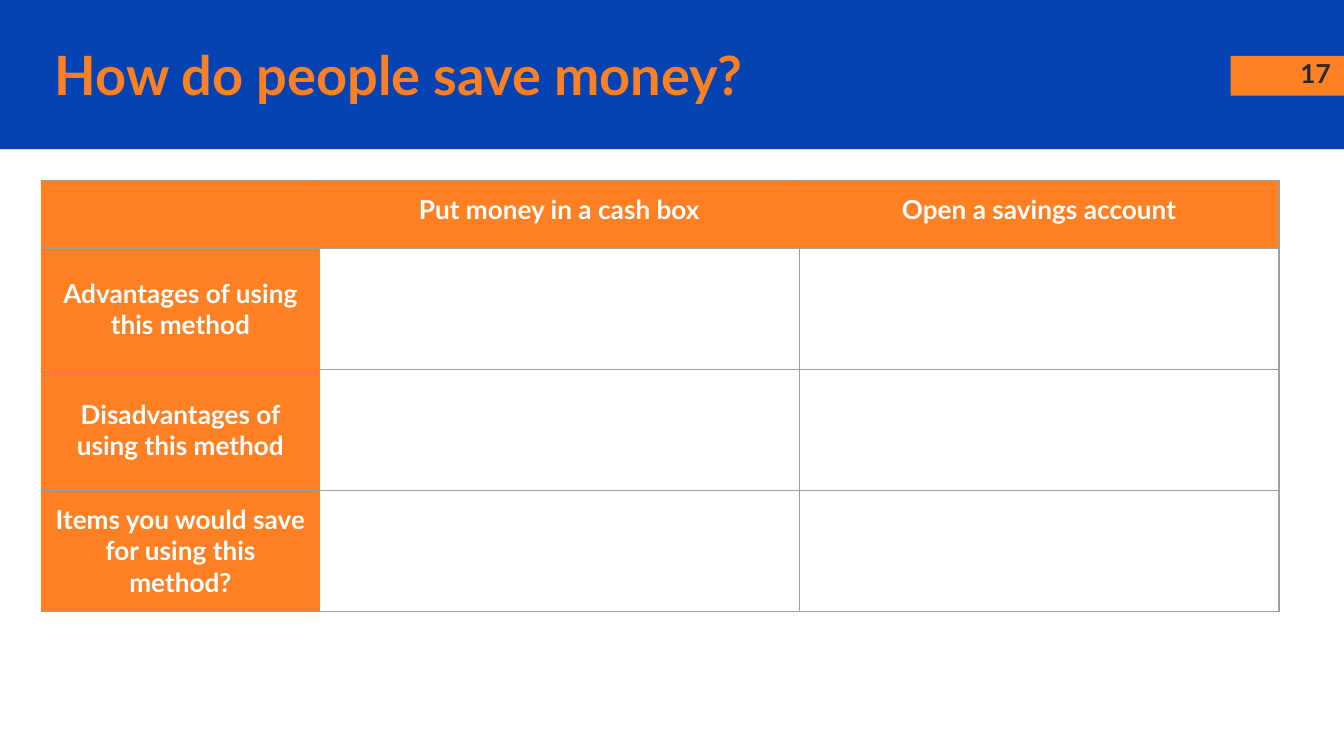
from lxml.etree import SubElement
from pptx import Presentation
from pptx.dml.color import RGBColor
from pptx.enum.shapes import MSO_SHAPE
from pptx.enum.text import MSO_ANCHOR, PP_ALIGN
from pptx.oxml.ns import qn
from pptx.util import Pt

COLORS = {"blue": "0543B3", "orange": "FF8022", "dark": "262A33",
          "white": "FFFFFF", "gray": "9E9E9E"}
INSET = Pt(7.2)
HEADS = ["", "Put money in a cash box", "Open a savings account"]
ROWS = ["Advantages of using this method",
        "Disadvantages of using this method",
        "Items you would save for using this method?"]


def color(name):
    return RGBColor.from_string(COLORS[name])


class Deck:
    def __init__(self, slide, font="Lato"):
        self.slide = slide
        self.font = font

    def bar(self, x, y, w, h, fill):
        shape = self.slide.shapes.add_shape(
            MSO_SHAPE.RECTANGLE, Pt(x), Pt(y), Pt(w), Pt(h))
        shape.shadow.inherit = False
        shape.fill.solid()
        shape.fill.fore_color.rgb = color(fill)
        shape.line.fill.background()

    def style(self, frame, text, size, ink, align):
        """Put text in the frame and format it."""
        frame.text = text
        para = frame.paragraphs[0]
        para.alignment = align
        for run in para.runs:
            run.font.name = self.font
            run.font.size = Pt(size)
            run.font.bold = True
            run.font.color.rgb = color(ink)

    def label(self, x, y, w, h, text, size, ink, align=PP_ALIGN.LEFT,
              anchor=MSO_ANCHOR.TOP):
        box = self.slide.shapes.add_textbox(Pt(x), Pt(y), Pt(w), Pt(h))
        frame = box.text_frame
        frame.word_wrap = True
        frame.vertical_anchor = anchor
        frame.margin_left = frame.margin_right = INSET
        frame.margin_top = frame.margin_bottom = INSET
        self.style(frame, text, size, ink, align)

    def edge(self, cell, side, ink):
        line = SubElement(cell._tc.get_or_add_tcPr(), qn(f"a:ln{side}"),
                          w=str(Pt(0.75)))
        fill = SubElement(line, qn("a:solidFill"))
        SubElement(fill, qn("a:srgbClr"), val=COLORS[ink])

    def grid(self, x, y, widths, heights, texts):
        """Table with filled first row and column; edges between filled cells blend in."""
        table = self.slide.shapes.add_table(
            len(heights), len(widths), Pt(x), Pt(y),
            Pt(sum(widths)), Pt(sum(heights))).table
        table.first_row = table.horz_banding = False
        for col, width in zip(table.columns, widths):
            col.width = Pt(width)
        last = len(widths) - 1
        for r, height in enumerate(heights):
            table.rows[r].height = Pt(height)
            for c in range(len(widths)):
                cell = table.cell(r, c)
                cell.margin_left = cell.margin_right = INSET
                cell.margin_top = cell.margin_bottom = INSET
                left = c <= 1 or r == 0
                right = c == 0 or (r == 0 and c < last)
                self.edge(cell, "L", "orange" if left else "gray")
                self.edge(cell, "R", "orange" if right else "gray")
                self.edge(cell, "T", "gray")
                self.edge(cell, "B", "gray")
                if r and c:
                    cell.fill.background()
                    continue
                cell.fill.solid()
                cell.fill.fore_color.rgb = color("orange")
                cell.vertical_anchor = MSO_ANCHOR.MIDDLE if r else MSO_ANCHOR.TOP
                if texts[r][c]:
                    self.style(cell.text_frame, texts[r][c], 14, "white",
                               PP_ALIGN.CENTER)


def main():
    prs = Presentation()
    prs.slide_width, prs.slide_height = Pt(720), Pt(405)
    deck = Deck(prs.slides.add_slide(prs.slide_layouts[6]))
    deck.bar(0, 0, 720, 80, "blue")
    deck.bar(659.3, 30, 60.7, 21.3, "orange")
    deck.label(676.8, 23.8, 43.2, 31, "17", 14, "dark", PP_ALIGN.RIGHT)
    deck.grid(22.2, 96.8, [149, 257, 257], [36.2] + [64.8] * 3,
              [HEADS] + [[text] for text in ROWS])
    deck.label(22.2, 19.5, 609, 40.5, "How do people save money?", 29,
               "orange", anchor=MSO_ANCHOR.MIDDLE)
    prs.save("out.pptx")


if __name__ == "__main__":
    main()
